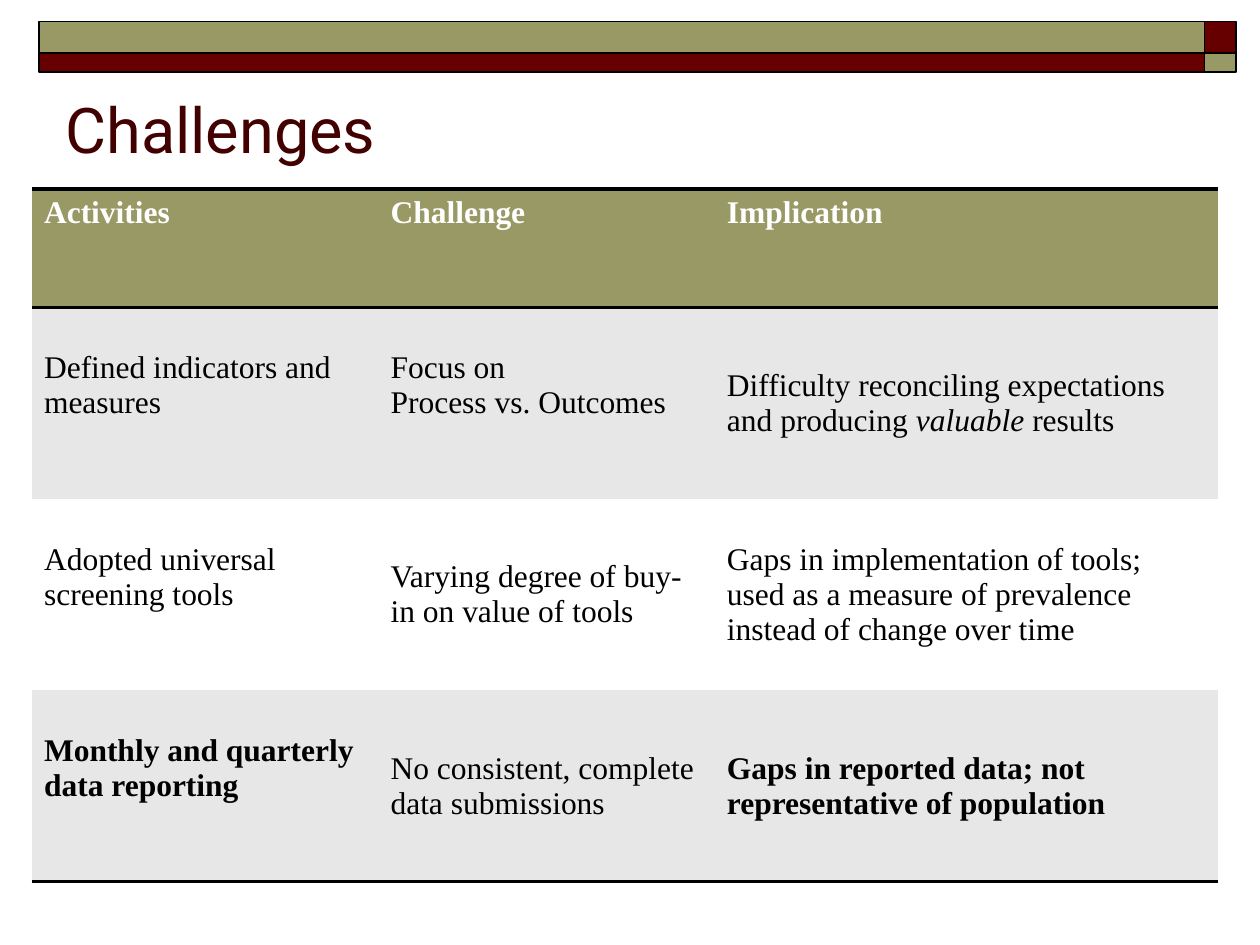
from lxml.etree import SubElement
from pptx import Presentation
from pptx.dml.color import RGBColor
from pptx.enum.shapes import MSO_SHAPE
from pptx.enum.text import MSO_ANCHOR, PP_ALIGN
from pptx.oxml.ns import qn
from pptx.util import Inches, Pt

OLIVE = RGBColor(0x99, 0x99, 0x66)
MAROON = RGBColor(0x66, 0x00, 0x00)
TITLE_RED = RGBColor(0x42, 0x00, 0x00)
GRAY = RGBColor(0xE7, 0xE7, 0xE7)
WHITE = RGBColor(0xFF, 0xFF, 0xFF)
BLACK = RGBColor(0x00, 0x00, 0x00)
NO_STYLE = "{2D5ABB26-0587-4C30-8999-92F81FD0307C}"


def add_border(cell, side):
    """Draw a 2 pt black rule on one side; call before the cell's fill is set."""
    ln = SubElement(cell._tc.get_or_add_tcPr(), qn(f"a:ln{side}"), w=str(Pt(2)))
    fill = SubElement(ln, qn("a:solidFill"))
    SubElement(fill, qn("a:srgbClr"), val=str(BLACK))


prs = Presentation()
prs.slide_width, prs.slide_height = Inches(10), Inches(7.5)
s = prs.slides.add_slide(prs.slide_layouts[5])

# Two-tone band across the top
for x, y, w, h, color in [
    (9.56, 0.17, 0.25, 0.25, MAROON),
    (0.31, 0.17, 9.25, 0.25, OLIVE),
    (0.31, 0.42, 9.25, 0.15, MAROON),
    (9.56, 0.42, 0.25, 0.15, OLIVE),
]:
    sp = s.shapes.add_shape(MSO_SHAPE.RECTANGLE, Inches(x), Inches(y), Inches(w), Inches(h))
    sp.shadow.inherit = False
    sp.fill.solid()
    sp.fill.fore_color.rgb = color
    sp.line.color.rgb = BLACK
    sp.line.width = Pt(1)

title = s.shapes.title
title.left, title.top = Inches(0.42), Inches(0.67)
title.width, title.height = Inches(9), Inches(1.25)
tf = title.text_frame
tf.vertical_anchor = MSO_ANCHOR.TOP
p = tf.paragraphs[0]
p.alignment = PP_ALIGN.LEFT
r = p.add_run()
r.text = "Challenges"
r.font.name, r.font.size = "Roboto", Pt(36)
r.font.color.rgb = TITLE_RED

# Each cell is a list of paragraphs, each paragraph a list of (text, style) runs
rows = [
    [[[("Activities", "b")]], [[("Challenge", "b")]], [[("Implication", "b")]]],
    [
        [[("Defined indicators and measures", "")]],
        [[("Focus on", "")], [("Process vs. Outcomes", "")]],
        [[("Difficulty reconciling expectations and producing ", ""),
          ("valuable ", "i"), ("results", "")]],
    ],
    [
        [[("Adopted universal screening tools", "")]],
        [[("Varying degree of buy-in on value of tools", "")]],
        [[("Gaps in implementation of tools; used as a measure of prevalence "
           "instead of change over time", "")]],
    ],
    [
        [[("Monthly and quarterly data reporting", "b")]],
        [[("No consistent, complete data submissions", "")]],
        [[("Gaps in reported data; not representative of population", "b")]],
    ],
]
row_fills = [OLIVE, GRAY, WHITE, GRAY]
row_borders = ["TB", "", "", "B"]
raised_cells = {(1, 0), (1, 1), (2, 0), (3, 0)}  # text sits above the middle

table = s.shapes.add_table(4, 3, Inches(0.25), Inches(1.5), Inches(9.42), Inches(5.5)).table
table.horz_banding = False
table._tbl.tblPr.find(qn("a:tableStyleId")).text = NO_STYLE
for col, width in zip(table.columns, [2.75, 2.67, 4]):
    col.width = Inches(width)
for row, height in zip(table.rows, [0.94, 1.52, 1.52, 1.52]):
    row.height = Inches(height)

for i, row in enumerate(rows):
    for j, paragraphs in enumerate(row):
        cell = table.cell(i, j)
        for side in row_borders[i]:
            add_border(cell, side)
        cell.fill.solid()
        cell.fill.fore_color.rgb = row_fills[i]
        cell.vertical_anchor = MSO_ANCHOR.MIDDLE if i else MSO_ANCHOR.TOP
        if (i, j) in raised_cells:
            cell.margin_bottom = Inches(0.33)
        tf = cell.text_frame
        for n, runs in enumerate(paragraphs):
            p = tf.add_paragraph() if n else tf.paragraphs[0]
            for text, style in runs:
                r = p.add_run()
                r.text = text
                r.font.name, r.font.size = "Times New Roman", Pt(18)
                r.font.bold, r.font.italic = style == "b", style == "i"
                r.font.color.rgb = BLACK if i else WHITE

prs.save("out.pptx")
